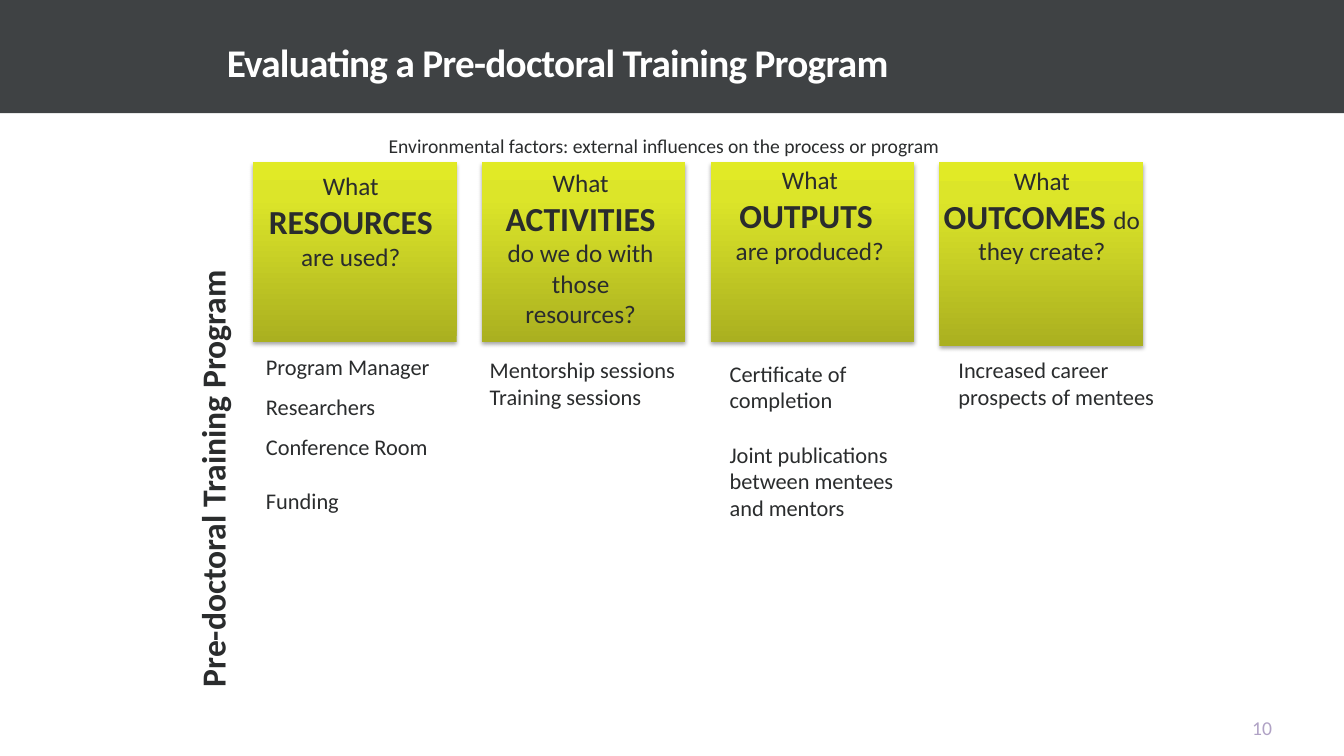
from copy import deepcopy
from dataclasses import dataclass

from lxml import etree
from pptx import Presentation
from pptx.dml.color import RGBColor
from pptx.enum import shapes, text
from pptx.oxml.ns import qn
from pptx.util import Pt

LEFT, MID, RIGHT = text.PP_ALIGN.LEFT, text.PP_ALIGN.CENTER, text.PP_ALIGN.RIGHT
TOP, LOW = text.MSO_ANCHOR.TOP, text.MSO_ANCHOR.BOTTOM


@dataclass(frozen=True)
class Theme:
    font: str = "Calibri"
    ink: str = "2A2C2D"
    white: str = "FFFFFF"
    band: str = "3F4244"
    pale: str = "B0A2C5"
    lime: tuple = ((0, "AAB020"), (0.8, "DCE529"), (1, "E1EA26"))
    title: int = 28
    key: int = 24
    lead: int = 18
    body: int = 16
    small: int = 14


class Deck:
    def __init__(self, theme):
        self.theme = theme
        self.file = Presentation()
        self.file.slide_width, self.file.slide_height = Pt(960), Pt(540)
        self.slide = self.file.slides.add_slide(self.file.slide_layouts[6])

    def rect(self, *box):
        form = self.slide.shapes.add_shape(
            shapes.MSO_SHAPE.RECTANGLE, *map(Pt, box))
        form.line.fill.background()
        form.shadow.inherit = False
        return form

    def band(self, *box):
        fill = self.rect(*box).fill
        fill.solid()
        fill.fore_color.rgb = RGBColor.from_string(self.theme.band)

    def card(self, *box):
        """Draw a lime gradient box with a soft shadow below it."""
        form = self.rect(*box)
        form.fill.gradient()
        form.fill.gradient_angle = 90
        props = form.element.spPr
        stops = props.find(".//" + qn("a:gsLst"))
        stops.append(deepcopy(stops[0]))
        for stop, (place, tone) in zip(form.fill.gradient_stops, self.theme.lime):
            stop.position = place
            stop.color.rgb = RGBColor.from_string(tone)
        shade = etree.SubElement(
            props.find(qn("a:effectLst")), qn("a:outerShdw"),
            blurRad=str(Pt(3.1)), dist=str(Pt(1.8)), dir="5400000", rotWithShape="0")
        tone = etree.SubElement(shade, qn("a:srgbClr"), val="000000")
        etree.SubElement(tone, qn("a:alpha"), val="35000")

    def text(self, box, paras, align=LEFT, tone=None, gaps=(), pad=(7.2, 3.6, 7.2, 3.6),
             anchor=TOP, wrap=True):
        """Write paragraphs of (words, size, bold) runs; gaps are the spaces between them."""
        form = self.slide.shapes.add_textbox(*map(Pt, box))
        frame = form.text_frame
        frame.word_wrap, frame.vertical_anchor = wrap, anchor
        (frame.margin_left, frame.margin_top,
         frame.margin_right, frame.margin_bottom) = map(Pt, pad)
        for i, runs in enumerate(paras):
            para = frame.paragraphs[0] if i == 0 else frame.add_paragraph()
            para.alignment = align
            if 0 < i <= len(gaps):
                para.space_before = Pt(gaps[i - 1])
            for words, size, bold in runs:
                run = para.add_run()
                run.text = words
                font = run.font
                font.name, font.size, font.bold = self.theme.font, Pt(size), bold
                font.color.rgb = RGBColor.from_string(tone or self.theme.ink)
        return form

    def title(self, box, words):
        form = self.text(box, [[(words, self.theme.title, True)]], tone=self.theme.white,
                         pad=(0, 0, 7.2, 3.6), anchor=LOW)
        para = form.text_frame.paragraphs[0]
        para.line_spacing = 0.85
        para.runs[0].font._element.set("spc", "-50")

    def save(self):
        self.file.save("out.pptx")


def main():
    theme = Theme()
    deck = Deck(theme)
    deck.band(0, 0, 960, 80.9)
    deck.title((162, 0, 620.6, 64.8), "Evaluating a Pre-doctoral Training Program")

    # Each column: card height, heading box, key word, rest, rest on a new
    # paragraph, list box, list items, gaps between items
    columns = (
        (128.2, (180.7, 118.1, 139.7, 80), "RESOURCES", "are used?", True,
         (182.9, 248.4, 154.8, 124),
         ("Program Manager", "Researchers", "Conference Room", "Funding"), (9.5, 9.5, 19.5)),
        (128.2, (351.4, 115.9, 126.7, 124), "ACTIVITIES ", "do we do with those resources?",
         False, (342.7, 250.6, 154.8, 85), ("Mentorship sessions", "Training sessions"), ()),
        (128.2, (509, 113.8, 139, 80), "OUTPUTS ", "are produced?", True,
         (514.1, 253.4, 154.8, 163),
         ("Certificate of completion", "Joint publications between mentees and mentors"),
         (19.5,)),
        (131, (666.7, 114.5, 155, 80), "OUTCOMES ", "do they create?", False,
         (677.5, 250.6, 154.8, 143), ("Increased career prospects of mentees",), ()),
    )
    for i, (high, head, key, rest, split, spot, items, gaps) in enumerate(columns):
        deck.card(180.7 + i * 163.45, 115.9, 145.5, high)
        lead = [("What ", theme.lead, False), (key, theme.key, True)]
        tail = [(rest, theme.lead, False)]
        deck.text(head, [lead, tail] if split else [lead + tail], MID)
        deck.text(spot, [[(item, theme.body, False)] for item in items], gaps=gaps)

    deck.text((90.7, 92.2, 767.5, 24.5),
              [[("Environmental factors: external influences on the process or program",
                 theme.small, False)]], MID)
    side = deck.text((-17.3, 324, 337.7, 36),
                     [[("Pre-doctoral Training Program", theme.key, True)]], MID)
    side.rotation = 270
    deck.text((871.9, 510.5, 36.7, 18), [[("10", theme.small, False)]], RIGHT, theme.pale,
              pad=(0, 0, 0, 0), anchor=LOW, wrap=False)
    deck.save()


if __name__ == "__main__":
    main()
